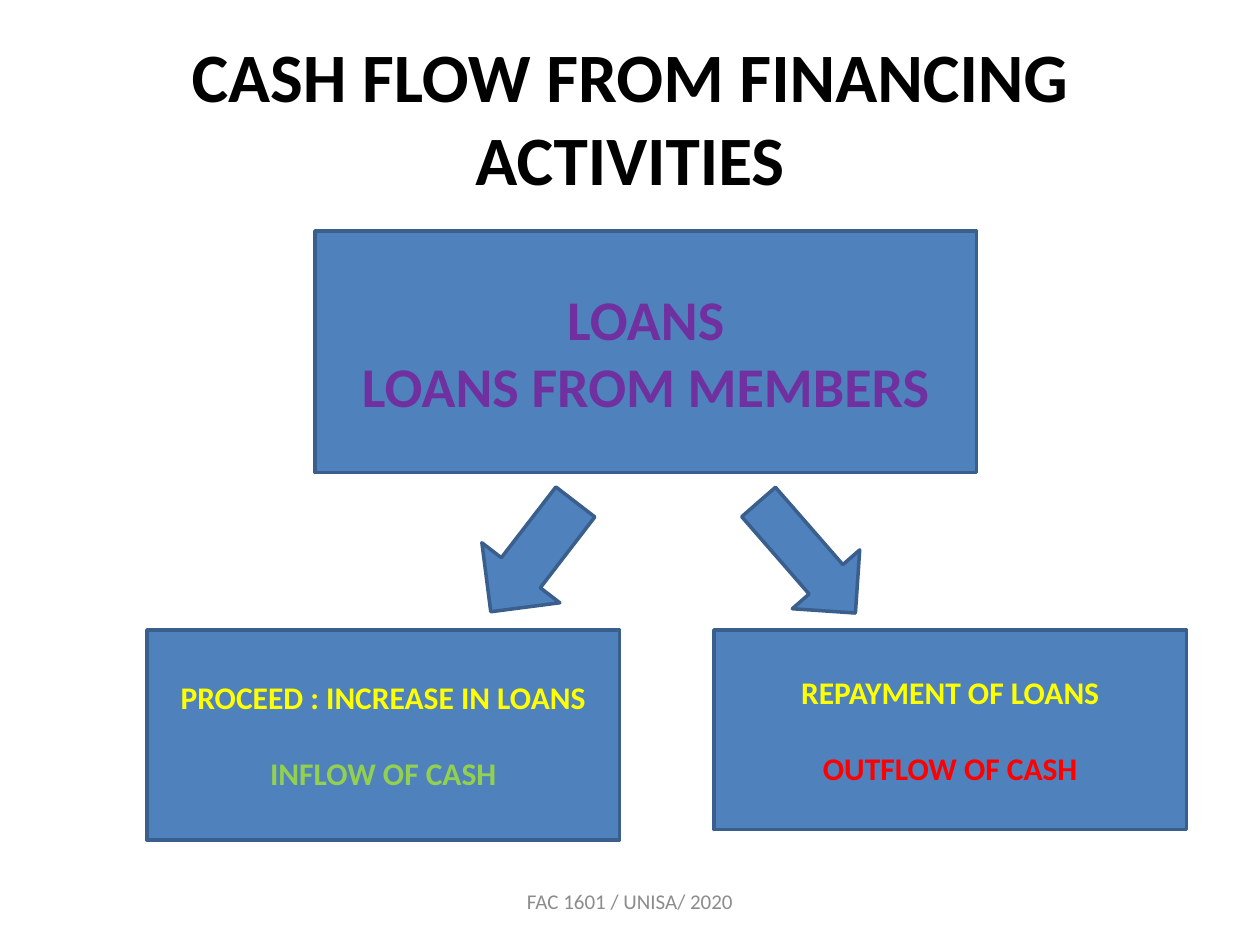
from pptx import Presentation
from pptx.dml.color import RGBColor
from pptx.enum.shapes import MSO_SHAPE
from pptx.enum.text import MSO_ANCHOR, MSO_AUTO_SIZE, PP_ALIGN
from pptx.util import Pt

BLUE, EDGE = "4F81BD", "3A5F8C"
PURPLE, YELLOW, GREEN, RED = "7030A0", "FFFF00", "92D050", "FF0000"


def rgb(value):
    return RGBColor.from_string(value)


def set_attrs(obj, values):
    for name, value in values.items():
        setattr(obj, name, value)


def place(sp, left, top, width, height):
    box = {"left": left, "top": top, "width": width, "height": height}
    set_attrs(sp, {name: Pt(value) for name, value in box.items()})


def write(sp, lines, size, bold=True, gap=0):
    tf = sp.text_frame
    set_attrs(tf, {"word_wrap": True, "auto_size": MSO_AUTO_SIZE.NONE,
                   "vertical_anchor": MSO_ANCHOR.MIDDLE})
    for i, (text, color) in enumerate(lines):
        p = tf.add_paragraph() if i else tf.paragraphs[0]
        set_attrs(p, {"alignment": PP_ALIGN.CENTER, "space_before": Pt(gap if i else 0)})
        r = p.add_run()
        r.text = text
        set_attrs(r.font, {"name": "Calibri", "size": Pt(size), "bold": bold})
        r.font.color.rgb = rgb(color)


def add_title(s, text):
    sp = s.shapes.title
    place(sp, 36, 21.6, 648, 90)
    write(sp, [(text, "000000")], 39.6)


def add_footer(s, text):
    sp = s.shapes.add_textbox(Pt(246), Pt(500.4), Pt(228), Pt(28.8))
    write(sp, [(text, "8C8C8C")], 12, bold=False)


def add_blue_shape(s, kind, left, top, width, height):
    sp = s.shapes.add_shape(kind, Pt(left), Pt(top), Pt(width), Pt(height))
    sp.shadow.inherit = False
    sp.fill.solid()
    sp.fill.fore_color.rgb = rgb(BLUE)
    sp.line.color.rgb = rgb(EDGE)
    sp.line.width = Pt(2)
    return sp


def add_box(s, box, lines, size, gap=0):
    sp = add_blue_shape(s, MSO_SHAPE.RECTANGLE, *box)
    write(sp, lines, size, gap=gap)


def add_arrow(s, box, rotation):
    sp = add_blue_shape(s, MSO_SHAPE.DOWN_ARROW, *box)
    sp.rotation = rotation


def main():
    prs = Presentation()
    set_attrs(prs, {"slide_width": Pt(720), "slide_height": Pt(540)})
    s = prs.slides.add_slide(prs.slide_layouts[5])
    add_title(s, "CASH FLOW FROM FINANCING ACTIVITIES")
    add_footer(s, "FAC 1601 / UNISA/ 2020")
    add_box(s, (180, 132, 378, 138),
            [("LOANS", PURPLE), ("LOANS FROM MEMBERS", PURPLE)], 32)
    add_arrow(s, (276.5, 278.6, 56.2, 79.2), 37.6)
    add_arrow(s, (435.6, 276.5, 51.1, 84.2), 318.9)
    add_box(s, (84, 360, 270, 120),
            [("PROCEED : INCREASE IN LOANS", YELLOW), ("INFLOW OF CASH", GREEN)], 18, 22)
    add_box(s, (408, 360, 270, 114),
            [("REPAYMENT OF LOANS", YELLOW), ("OUTFLOW OF CASH", RED)], 18, 22)
    prs.save("out.pptx")


if __name__ == "__main__":
    main()
